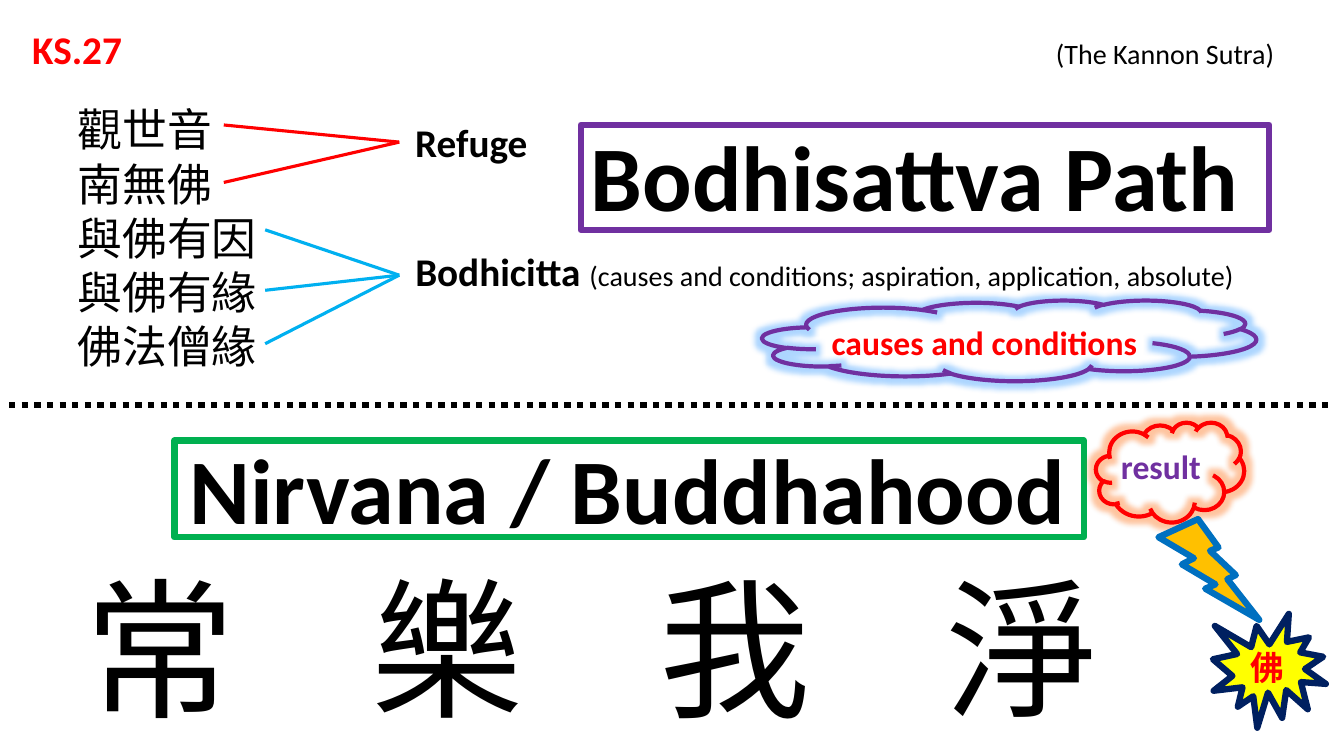
from dataclasses import dataclass

from lxml import etree
from pptx import Presentation
from pptx.dml.color import RGBColor
from pptx.enum.dml import MSO_LINE
from pptx.enum.shapes import MSO_CONNECTOR, MSO_SHAPE
from pptx.enum.text import MSO_AUTO_SIZE
from pptx.oxml.ns import qn
from pptx.util import Inches, Pt

RECT = MSO_SHAPE.RECTANGLE
CLOUD = MSO_SHAPE.CLOUD
BOLT = MSO_SHAPE.LIGHTNING_BOLT
BURST = MSO_SHAPE.EXPLOSION1
STRAIGHT = MSO_CONNECTOR.STRAIGHT
DOTS = MSO_LINE.ROUND_DOT
GROW = MSO_AUTO_SIZE.SHAPE_TO_FIT_TEXT

LATIN, HAN = "Calibri", "Noto Sans CJK SC"
COLORS = {
    "black": "000000", "red": "FF0000", "sky": "00B0F0", "purple": "7030A0",
    "green": "00B050", "gold": "FFC000", "blue": "0070C0", "yellow": "FFFF00",
    "navy": "002060", "blue glow": "3399FF", "orange glow": "FF6D10",
}
HAN_PITCH = 1.21  # line height of the Chinese text, in ems

Box = tuple[float, float, float, float]
Point = tuple[float, float]


@dataclass
class Span:
    text: str
    size: float
    color: str = "black"
    bold: bool = True
    face: str = LATIN


@dataclass
class Label:
    box: Box
    lines: list[list[Span]]
    tabs: tuple[tuple[float, str], ...] = ()
    pitch: float | None = None


@dataclass
class Figure:
    kind: int
    box: Box
    line: str
    width: float
    fill: str | None = None
    glow: str | None = None


@dataclass
class Fan:
    """Lines that run from several starts to one tip."""
    starts: list[Point]
    tip: Point
    color: str


def han(text: str, size: float, color: str = "black", bold: bool = False) -> Span:
    return Span(text, size, color, bold, HAN)


LABELS = [
    Label((0.74, 5.44, 11.86, 1.92), [[han("常\t樂\t我\t淨", 108)]],
          tuple((2.85 * step, "l") for step in (1, 2, 3))),
    Label((0.22, 0.17, 12.88, 0.58),
          [[Span("KS.27\t", 28, "red"), Span("(The Kannon Sutra)", 20, bold=False)]],
          ((12.32, "r"),), 1.07),
    Label((0.67, 0.96, 2.18, 2.79),
          [[han(verse, 32)] for verse in
           ("觀世音", "南無佛", "與佛有因", "與佛有緣", "佛法僧緣")]),
    Label((4.02, 1.12, 3.26, 0.57), [[Span("Refuge", 28)]]),
    Label((4.02, 2.4, 9.08, 0.57),
          [[Span("Bodhicitta ", 28),
            Span("(causes and conditions; aspiration, application, absolute)",
                 20, bold=False)]]),
    Label((5.76, 1.13, 6.99, 1.26), [[Span("Bodhisattva Path", 66)]]),
    Label((1.78, 4.24, 10.9, 1.21), [[Span("Nirvana / Buddhahood", 66)]]),
    Label((8.15, 3.14, 3.34, 0.5), [[Span("causes and conditions", 24, "red")]]),
    Label((11.02, 4.37, 1.17, 0.52), [[Span("result", 24, "purple")]]),
    Label((12.3, 6.37, 0.56, 0.5), [[han("佛", 24, "red", True)]]),
]
FIGURES = [
    Figure(RECT, (5.76, 1.24, 6.83, 1.04), "purple", 4.5),
    Figure(RECT, (1.73, 4.37, 9.02, 0.96), "green", 4.5),
    Figure(CLOUD, (7.56, 2.98, 4.9, 0.8), "purple", 3, glow="blue glow"),
    Figure(CLOUD, (10.87, 4.19, 1.47, 0.99), "red", 3, glow="orange glow"),
    Figure(BOLT, (11.49, 5.15, 1, 1), "blue", 4.5, "gold"),
    Figure(BURST, (12.03, 6.09, 1.12, 1.13), "navy", 4.5, "yellow"),
]
FANS = [
    Fan([(2.22, 1.24), (2.22, 1.81)], (3.96, 1.41), "red"),
    Fan([(2.63, 2.28), (2.63, 2.88), (2.63, 3.41)], (3.96, 2.73), "sky"),
]


def rgb(name: str) -> RGBColor:
    return RGBColor.from_string(COLORS[name])


def style(font, span: Span) -> None:
    font.size, font.bold, font.name = Pt(span.size), span.bold, span.face
    font.color.rgb = rgb(span.color)
    if span.face == HAN:
        latin = font._element.find(qn("a:latin"))
        east = etree.Element(qn("a:ea"), typeface=HAN)
        latin.addnext(east)


def write(slide, label: Label) -> None:
    shape = slide.shapes.add_textbox(*map(Inches, label.box))
    frame = shape.text_frame
    frame.word_wrap, frame.auto_size = True, GROW
    for index, spans in enumerate(label.lines):
        para = frame.paragraphs[0] if index == 0 else frame.add_paragraph()
        if label.pitch:
            para.line_spacing = label.pitch
        elif spans[0].face == HAN:
            para.line_spacing = Pt(round(spans[0].size * HAN_PITCH, 1))
        if label.tabs:
            stops = etree.SubElement(para._p.get_or_add_pPr(), qn("a:tabLst"))
            for place, side in label.tabs:
                etree.SubElement(stops, qn("a:tab"), pos=str(Inches(place)), algn=side)
        for span in spans:
            run = para.add_run()
            run.text = span.text
            if len(spans) > 1:
                style(run.font, span)
        if len(spans) == 1:
            style(para.font, spans[0])


def draw(slide, figure: Figure) -> None:
    shape = slide.shapes.add_shape(figure.kind, *map(Inches, figure.box))
    shape.shadow.inherit = False
    if figure.fill:
        shape.fill.solid()
        shape.fill.fore_color.rgb = rgb(figure.fill)
    else:
        shape.fill.background()
    shape.line.color.rgb = rgb(figure.line)
    shape.line.width = Pt(figure.width)
    if figure.glow:
        effects = shape._element.spPr.find(qn("a:effectLst"))
        glow = etree.SubElement(effects, qn("a:glow"), rad=str(Pt(8)))
        color = etree.SubElement(glow, qn("a:srgbClr"), val=COLORS[figure.glow])
        etree.SubElement(color, qn("a:alpha"), val="40000")


def join(slide, start: Point, end: Point, color: str, width: float):
    line = slide.shapes.add_connector(STRAIGHT, *map(Inches, start + end))
    line.line.color.rgb = rgb(color)
    line.line.width = Pt(width)
    etree.SubElement(line._element.spPr, qn("a:effectLst"))
    return line


def main() -> None:
    deck = Presentation()
    deck.slide_width, deck.slide_height = Inches(13.33), Inches(7.5)
    slide = deck.slides.add_slide(deck.slide_layouts[6])
    for fan in FANS:
        for start in fan.starts:
            join(slide, start, fan.tip, fan.color, 2.25)
    border = join(slide, (0.09, 4.02), (13.21, 4.02), "black", 4.5)
    border.line.dash_style = DOTS
    for figure in FIGURES:
        draw(slide, figure)
    for label in LABELS:
        write(slide, label)
    deck.save("out.pptx")


if __name__ == "__main__":
    main()
